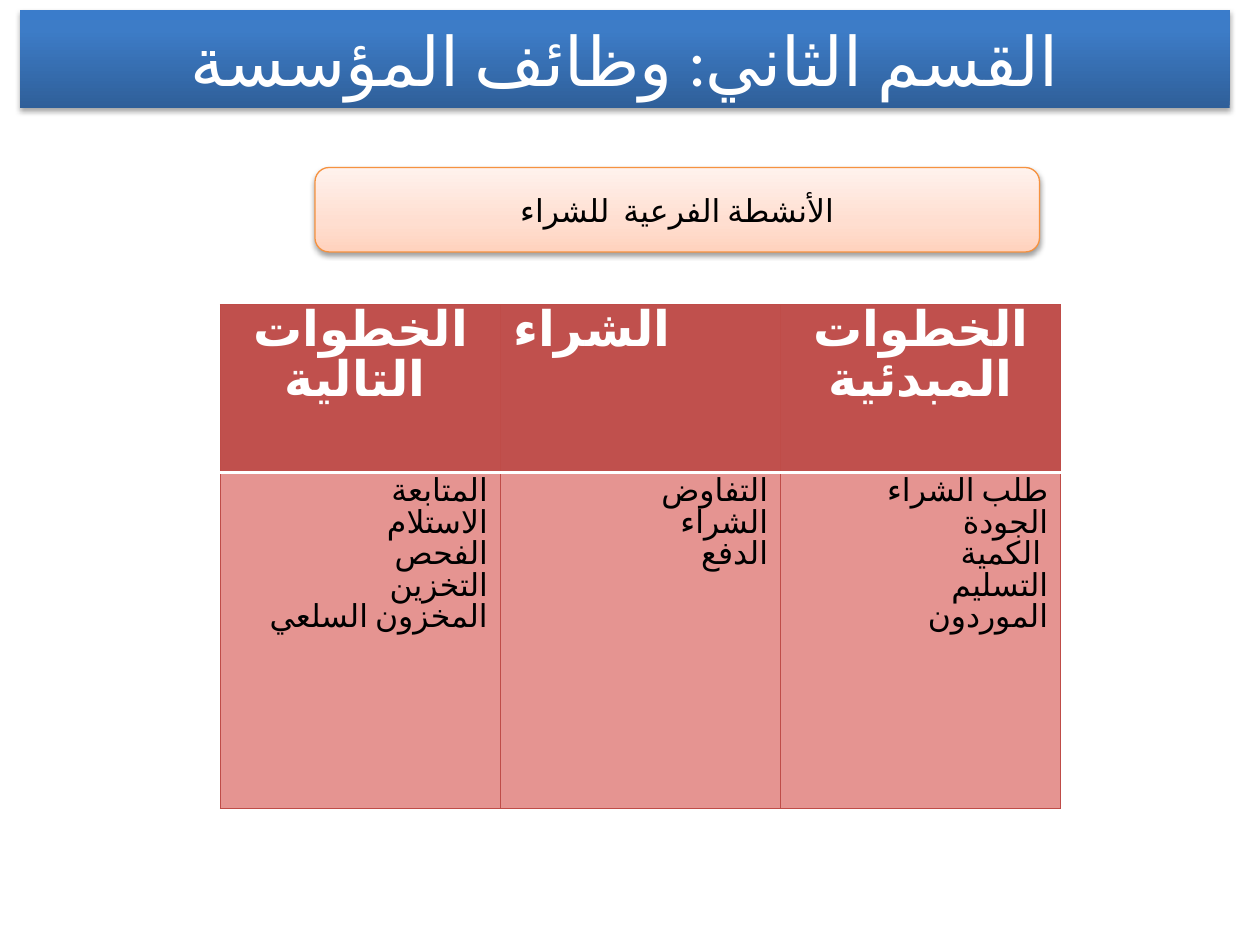
from dataclasses import dataclass

from lxml.etree import SubElement
from pptx import Presentation
from pptx.dml.color import RGBColor as RGB
from pptx.enum.lang import MSO_LANGUAGE_ID as Language
from pptx.enum.shapes import MSO_SHAPE as Preset
from pptx.enum.text import MSO_ANCHOR as Anchor, PP_ALIGN as Align
from pptx.oxml import parse_xml
from pptx.oxml.ns import nsdecls, qn
from pptx.util import Inches, Pt

FONT = "Calibri"
COLORS = {
    "white": "FFFFFF",
    "black": "000000",
    "orange": "F69240",
    "header": "C0504D",
    "body": "E59491",
    "grid": "BF4C48",
}


@dataclass
class Banner:
    text: str
    preset: Preset
    box: tuple[float, float, float, float]
    stops: list[tuple[int, str]]  # from bottom to top
    size: float
    color: str
    shadow: tuple[float, float, int]  # blur, distance, opacity
    outline: str | None = None


@dataclass
class Column:
    heading: str
    heading_align: Align
    steps: list[str]


BANNERS = [
    Banner("القسم الثاني: وظائف المؤسسة", Preset.RECTANGLE,
           (0.16, 0.08, 9.6, 0.78),
           [(0, "2F5F99"), (80, "3D7CC7"), (100, "3A7CCB")],
           39, "white", (3.1, 1.8, 35)),
    Banner("الأنشطة الفرعية  للشراء", Preset.ROUNDED_RECTANGLE,
           (2.5, 1.33, 5.75, 0.67),
           [(0, "FFD2BD"), (35, "FFDED0"), (100, "FFF2ED")],
           18, "black", (3.1, 1.6, 38), "orange"),
]
COLUMNS = [
    Column("الخطوات التالية ", Align.CENTER,
           ["المتابعة", "الاستلام", "الفحص", "التخزين", "المخزون السلعي"]),
    Column("الشراء", Align.LEFT, ["التفاوض", "الشراء", "الدفع"]),
    Column("الخطوات المبدئية", Align.CENTER,
           ["طلب الشراء", "الجودة", "الكمية ", "التسليم", "الموردون"]),
]
BASE_FORMAT = {"name": FONT, "language_id": Language.ARABIC_ALGERIA}
HEADING_FORMAT = BASE_FORMAT | {"size": Pt(28), "bold": True}
STEP_FORMAT = BASE_FORMAT | {"size": Pt(18), "bold": False}


def write(paragraph, text: str, align: Align, color: str, font_format: dict) -> None:
    paragraph.alignment = align
    run = paragraph.add_run()
    run.text = text
    for attribute, value in font_format.items():
        setattr(run.font, attribute, value)
    run.font.color.rgb = RGB.from_string(COLORS[color])
    # Arabic letters take the complex-script font
    SubElement(run._r.get_or_add_rPr(), qn("a:cs"), typeface=FONT)


def add_gradient(shape, stops: list[tuple[int, str]]) -> None:
    """Fill the shape with a gradient that runs upwards."""
    marks = "".join(
        f'<a:gs pos="{place * 1000}"><a:srgbClr val="{color}"/></a:gs>'
        for place, color in stops)
    gradient = parse_xml(
        f'<a:gradFill {nsdecls("a")} rotWithShape="1"><a:gsLst>{marks}</a:gsLst>'
        '<a:lin ang="16200000" scaled="0"/></a:gradFill>')
    shape._element.spPr.find(qn("a:prstGeom")).addnext(gradient)


def add_shadow(shape, blur: float, distance: float, opacity: int) -> None:
    shape.shadow.inherit = False
    effects = shape._element.spPr.find(qn("a:effectLst"))
    outer = SubElement(effects, qn("a:outerShdw"), blurRad=str(Pt(blur)),
                       dist=str(Pt(distance)), dir="5400000", rotWithShape="0")
    color = SubElement(outer, qn("a:srgbClr"), val=COLORS["black"])
    SubElement(color, qn("a:alpha"), val=str(opacity * 1000))


def add_banner(slide, banner: Banner) -> None:
    shape = slide.shapes.add_shape(banner.preset, *map(Inches, banner.box))
    add_gradient(shape, banner.stops)
    if banner.outline:
        shape.line.color.rgb = RGB.from_string(COLORS[banner.outline])
        shape.line.width = Pt(0.75)
    else:
        shape.line.fill.background()
    add_shadow(shape, *banner.shadow)
    frame = shape.text_frame
    frame.word_wrap = True
    frame.vertical_anchor = Anchor.MIDDLE
    write(frame.paragraphs[0], banner.text, Align.CENTER, banner.color,
          BASE_FORMAT | {"size": Pt(banner.size)})


def set_borders(cell, **special: tuple[str, float]) -> None:
    """Draw the four edges; special replaces the usual grid line on an edge."""
    properties = cell._tc.get_or_add_tcPr()
    for index, edge in enumerate("LRTB"):
        color, width = special.get(edge, ("grid", 0.75))
        properties.insert(index, parse_xml(
            f'<a:ln{edge} {nsdecls("a")} w="{Pt(width)}"><a:solidFill>'
            f'<a:srgbClr val="{COLORS[color]}"/></a:solidFill></a:ln{edge}>'))


def fill_cell(cell, lines: list[str], align: Align, color: str,
              background: str, font_format: dict) -> None:
    cell.fill.solid()
    cell.fill.fore_color.rgb = RGB.from_string(COLORS[background])
    frame = cell.text_frame
    for index, line in enumerate(lines):
        paragraph = frame.add_paragraph() if index else frame.paragraphs[0]
        paragraph.line_spacing = font_format["size"]
        write(paragraph, line, align, color, font_format)


def add_steps_table(slide, columns: list[Column]) -> None:
    table = slide.shapes.add_table(
        2, len(columns), Inches(1.75), Inches(2.42), Inches(6.67), Inches(4)).table
    for row, height in zip(table.rows, (1.33, 2.67)):
        row.height = Inches(height)
    divider = ("white", 2)
    for index, column in enumerate(columns):
        heading, steps = table.cell(0, index), table.cell(1, index)
        fill_cell(heading, [column.heading], column.heading_align,
                  "white", "header", HEADING_FORMAT)
        fill_cell(steps, column.steps, Align.RIGHT, "black", "body", STEP_FORMAT)
        set_borders(heading, B=divider)
        set_borders(steps, T=divider)


def main() -> None:
    deck = Presentation()
    deck.slide_width, deck.slide_height = Inches(10), Inches(7.5)
    slide = deck.slides.add_slide(deck.slide_layouts[6])

    # Title and subtitle
    for banner in BANNERS:
        add_banner(slide, banner)

    # Purchasing steps
    add_steps_table(slide, COLUMNS)

    deck.save("out.pptx")


if __name__ == "__main__":
    main()
